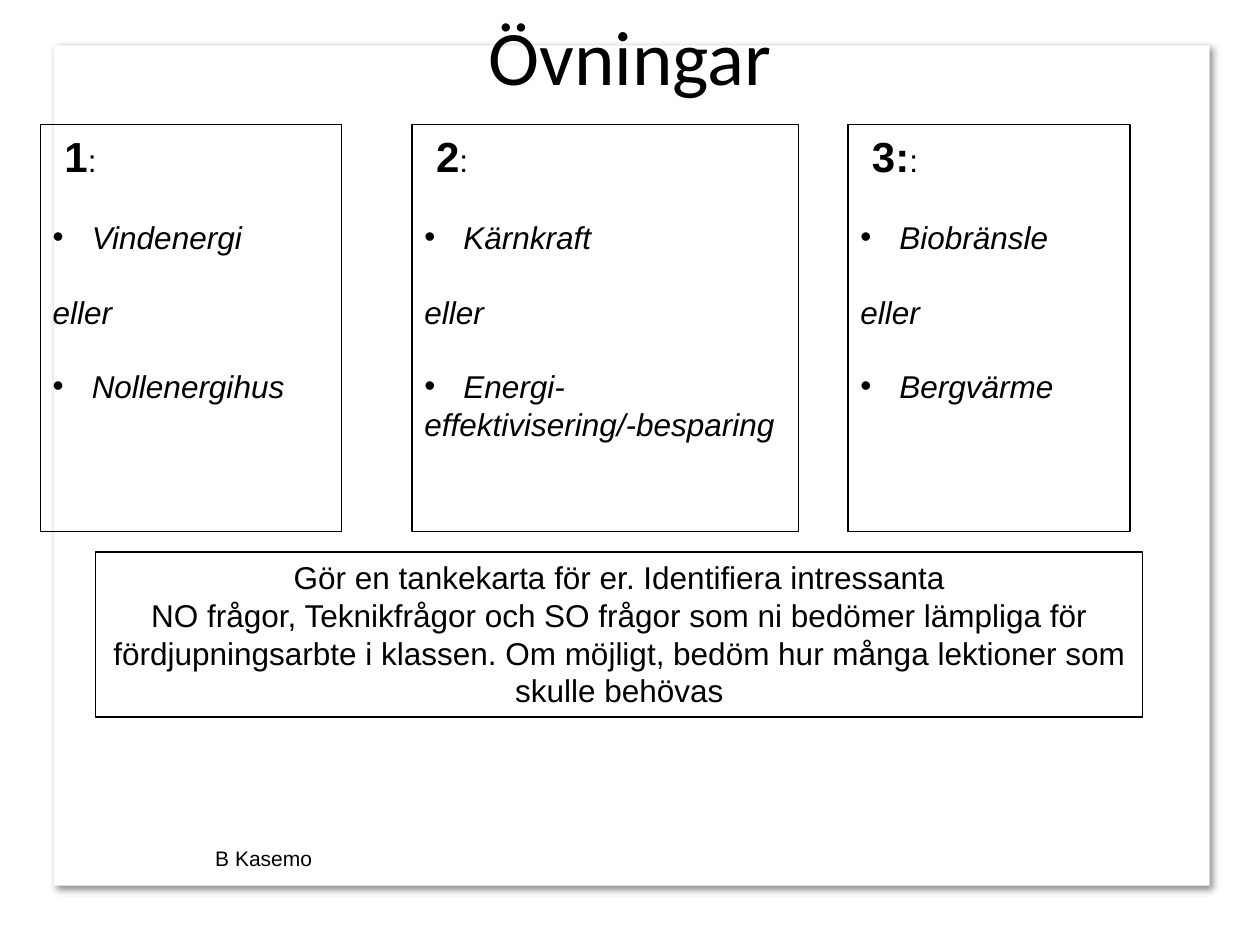
from lxml import etree
from pptx import Presentation
from pptx.dml.color import RGBColor
from pptx.enum.shapes import MSO_SHAPE
from pptx.enum.text import MSO_ANCHOR, PP_ALIGN
from pptx.oxml.ns import qn
from pptx.util import Inches, Pt

RECTANGLE = MSO_SHAPE.RECTANGLE
TOP, MIDDLE = MSO_ANCHOR.TOP, MSO_ANCHOR.MIDDLE
LEFT, CENTER = PP_ALIGN.LEFT, PP_ALIGN.CENTER
COLORS = {"paper": "FFFFFF", "ink": "000000"}
BODY_SIZE = 18
BLANK_LINE = Pt(21)
EXERCISE_TOP, EXERCISE_HEIGHT = 0.99, 3.23
EXERCISES = [
    (0.32, 2.39, " 1", "Vindenergi", "Nollenergihus", None),
    (3.27, 3.07, " 2", "Kärnkraft", "Energi-", "effektivisering/-besparing"),
    (6.73, 2.24, " 3:", "Biobränsle", "Bergvärme", None),
]
TASK_LINES = [
    "Gör en tankekarta för er. Identifiera intressanta",
    "NO frågor, Teknikfrågor och SO frågor som ni bedömer lämpliga för",
    "fördjupningsarbte i klassen. Om möjligt, bedöm hur många lektioner som",
    "skulle behövas",
]


def style_run(run, size=BODY_SIZE, font="Arial", bold=False, italic=False):
    """Give a run its font, size and weight."""
    run.font.name = font
    run.font.size = Pt(size)
    run.font.bold = bold
    run.font.italic = italic
    run.font.color.rgb = RGBColor.from_string(COLORS["ink"])


def add_bullet(paragraph):
    """Give a paragraph a hanging bullet."""
    properties = paragraph._p.get_or_add_pPr()
    properties.set("marL", str(Inches(0.31)))
    properties.set("indent", str(Inches(-0.31)))
    etree.SubElement(properties, qn("a:buFont"), typeface="Arial")
    etree.SubElement(properties, qn("a:buChar"), char="•")


def add_page_panel(slide):
    """Add the white page panel with its soft shadow."""
    panel = slide.shapes.add_shape(
        RECTANGLE, Inches(0.43), Inches(0.36), Inches(9.17), Inches(6.67))
    panel.fill.solid()
    panel.fill.fore_color.rgb = RGBColor.from_string(COLORS["paper"])
    panel.line.fill.background()
    panel.shadow.inherit = False
    effects = panel._element.spPr.find(qn("a:effectLst"))
    shadow = etree.SubElement(
        effects, qn("a:outerShdw"), blurRad=str(Pt(4)), dist=str(Pt(3)),
        dir="2700000", algn="tl", rotWithShape="0")
    shade = etree.SubElement(shadow, qn("a:srgbClr"), val=COLORS["ink"])
    etree.SubElement(shade, qn("a:alpha"), val="43000")


def add_label(slide, text, left, top, width, height, size, font, align):
    """Add a one-line text without a frame."""
    label = slide.shapes.add_textbox(
        Inches(left), Inches(top), Inches(width), Inches(height))
    frame = label.text_frame
    frame.word_wrap = True
    frame.vertical_anchor = MIDDLE
    frame.text = text
    frame.paragraphs[0].alignment = align
    style_run(frame.paragraphs[0].runs[0], size, font)


def add_framed_box(slide, left, top, width, height):
    """Add a thin outlined rectangle and return its text frame."""
    box = slide.shapes.add_shape(
        RECTANGLE, Inches(left), Inches(top), Inches(width), Inches(height))
    box.fill.background()
    box.line.color.rgb = RGBColor.from_string(COLORS["ink"])
    box.line.width = Pt(0.75)
    box.shadow.inherit = False
    frame = box.text_frame
    frame.word_wrap = True
    frame.vertical_anchor = TOP
    return frame


def add_choice_line(frame, text, bulleted=False, gap=BLANK_LINE):
    """Append an italic line to an exercise."""
    line = frame.add_paragraph()
    line.text = text
    line.alignment = LEFT
    line.space_before = gap
    if bulleted:
        add_bullet(line)
    style_run(line.runs[0], italic=True)


def add_exercise(slide, left, width, number, first, second, continuation):
    """Add one exercise with its two alternatives."""
    frame = add_framed_box(slide, left, EXERCISE_TOP, width, EXERCISE_HEIGHT)
    heading = frame.paragraphs[0]
    heading.alignment = LEFT
    for text, size, bold in ((number, 24, True), (":", BODY_SIZE, False)):
        run = heading.add_run()
        run.text = text
        style_run(run, size, bold=bold)
    add_choice_line(frame, first, bulleted=True)
    add_choice_line(frame, "eller")
    add_choice_line(frame, second, bulleted=True)
    if continuation:
        add_choice_line(frame, continuation, gap=Pt(0))


def add_task(slide):
    """Add the shared task below the exercises."""
    frame = add_framed_box(slide, 0.76, 4.38, 8.31, 1.31)
    frame.text = "\n".join(TASK_LINES)
    for paragraph in frame.paragraphs:
        paragraph.alignment = CENTER
        style_run(paragraph.runs[0])


def main():
    """Build and save the slide."""
    deck = Presentation()
    deck.slide_width, deck.slide_height = Inches(10), Inches(7.5)
    slide = deck.slides.add_slide(deck.slide_layouts[6])
    add_page_panel(slide)
    add_label(slide, "B Kasemo", 1.61, 6.66, 0.98, 0.3, 12, "Arial", LEFT)
    add_label(slide, "Övningar", 0.5, -0.19, 9, 1.25, 44, "Calibri", CENTER)
    for exercise in EXERCISES:
        add_exercise(slide, *exercise)
    add_task(slide)
    deck.save("out.pptx")


if __name__ == "__main__":
    main()
